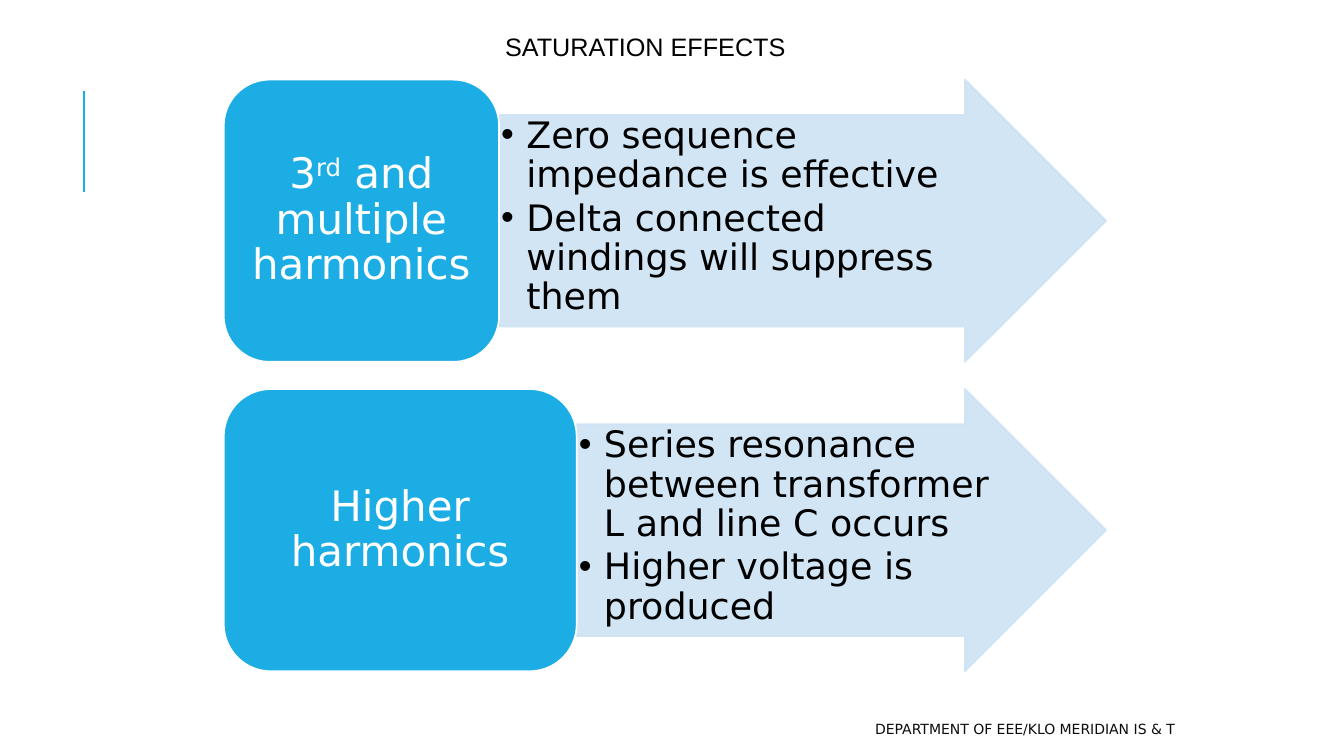
from dataclasses import dataclass

from lxml import etree
from pptx import Presentation
from pptx import util as u
from pptx.dml.color import RGBColor
from pptx.enum import shapes, text
from pptx.oxml.ns import qn

PX = 9144


@dataclass(frozen=True)
class Theme:
    accent: str = "1CADE4"
    pale: str = "CDE3F5"
    white: str = "FFFFFF"
    black: str = "000000"
    footer: str = "0D0D0D"
    heading_font: str = "Arial"
    body_font: str = "DejaVu Sans"
    title_size: int = 18
    label_size: int = 30
    list_size: int = 26
    footer_size: int = 10


def px(*lengths):
    return [u.Emu(length * PX) for length in lengths]


def write(frame, content, *, font, size, color, align=text.PP_ALIGN.LEFT,
          anchor=text.MSO_ANCHOR.TOP, insets=(10, 5), wrap=True,
          line_spacing=1.0, space_after=0, hanging=0):
    frame.word_wrap = wrap
    frame.auto_size = text.MSO_AUTO_SIZE.NONE
    frame.vertical_anchor = anchor
    across, down = px(*insets)
    frame.margin_left = frame.margin_right = across
    frame.margin_top = frame.margin_bottom = down
    for index, line in enumerate(content.split("\n")):
        paragraph = frame.paragraphs[0] if index == 0 else frame.add_paragraph()
        paragraph.alignment = align
        paragraph.line_spacing = line_spacing
        paragraph.space_before = u.Pt(0)
        paragraph.space_after = u.Pt(space_after)
        if hanging:
            properties = paragraph._p.get_or_add_pPr()
            properties.set("marL", str(hanging * PX))
            properties.set("indent", str(-hanging * PX))
            etree.SubElement(properties, qn("a:buChar")).set("char", "•")
        for part, words in enumerate(line.split("^")):
            run = paragraph.add_run()
            run.text = words
            run.font.name = font
            run.font.size = u.Pt(size)
            run.font.color.rgb = RGBColor.from_string(color)
            if part % 2:
                run._r.get_or_add_rPr().set("baseline", "30000")


class SlideBuilder:
    def __init__(self, slide, theme):
        self.slide = slide
        self.theme = theme

    def place(self, item, left, top, width, height):
        item.left, item.top, item.width, item.height = px(left, top, width, height)
        return item

    def title(self, content, *box):
        heading = self.place(self.slide.shapes.title, *box)
        write(heading.text_frame, content, font=self.theme.heading_font,
              size=self.theme.title_size, color=self.theme.black, wrap=False)

    def accent_line(self, x, top, bottom):
        accent = self.slide.shapes.add_connector(
            shapes.MSO_CONNECTOR.STRAIGHT, *px(x, top, x, bottom))
        accent.line.color.rgb = RGBColor.from_string(self.theme.accent)
        accent.line.width = u.Pt(1.5)
        etree.SubElement(accent._element.spPr, qn("a:effectLst"))

    def preset(self, kind, box, fill, outline):
        block = self.slide.shapes.add_shape(kind, *px(*box))
        block.shadow.inherit = False
        block.fill.solid()
        block.fill.fore_color.rgb = RGBColor.from_string(fill)
        block.line.color.rgb = RGBColor.from_string(outline)
        block.line.width = u.Pt(1.25)
        return block

    def arrow(self, *box):
        arrow = self.preset(shapes.MSO_SHAPE.RIGHT_ARROW, box,
                            self.theme.pale, self.theme.pale)
        arrow.adjustments[0] = 0.75
        arrow.adjustments[1] = 0.5
        for color in arrow._element.spPr.iter(qn("a:srgbClr")):
            etree.SubElement(color, qn("a:alpha")).set("val", "90000")

    def label(self, content, *box):
        label = self.preset(shapes.MSO_SHAPE.ROUNDED_RECTANGLE, box,
                            self.theme.accent, self.theme.white)
        write(label.text_frame, content, font=self.theme.body_font,
              size=self.theme.label_size, color=self.theme.white,
              align=text.PP_ALIGN.CENTER, anchor=text.MSO_ANCHOR.MIDDLE,
              insets=(12, 6), line_spacing=0.9)

    def bullets(self, slot, content, *box):
        effects = self.place(self.slide.placeholders[slot], *box)
        self.slide.shapes._spTree.append(effects._element)
        write(effects.text_frame, content, font=self.theme.body_font,
              size=self.theme.list_size, color=self.theme.black,
              insets=(2, 2), line_spacing=0.9, space_after=3, hanging=25)

    def footer(self, content, *box):
        footer = self.slide.shapes.add_textbox(*px(*box))
        write(footer.text_frame, content, font=self.theme.body_font,
              size=self.theme.footer_size, color=self.theme.footer,
              align=text.PP_ALIGN.RIGHT, anchor=text.MSO_ANCHOR.MIDDLE)


HARMONICS = [
    ("3^rd^ and multiple harmonics", 273, 497,
     "Zero sequence impedance is effective\n"
     "Delta connected windings will suppress them"),
    ("Higher harmonics", 350, 420,
     "Series resonance between transformer L and line C occurs\n"
     "Higher voltage is produced"),
]


def main():
    deck = Presentation()
    deck.slide_width, deck.slide_height = px(1333, 750)
    builder = SlideBuilder(deck.slides.add_slide(deck.slide_layouts[3]), Theme())
    left, right, first_top, height, pitch = 222, 1097, 79, 280, 307

    builder.accent_line(83, 90, 190)
    for row, (name, label_width, list_width, effects) in enumerate(HARMONICS):
        top = first_top + row * pitch
        start = left + label_width
        builder.arrow(start, top, right - start, height)
        builder.bullets(row + 1, effects, start, top + height // 8,
                        list_width, height * 3 // 4)
        builder.label(name, left, top, label_width, height)
    builder.title("SATURATION EFFECTS", 491, 26, 301, 40)
    builder.footer("DEPARTMENT OF EEE/KLO MERIDIAN IS & T", 530, 708, 645, 30)
    deck.save("out.pptx")


if __name__ == "__main__":
    main()
